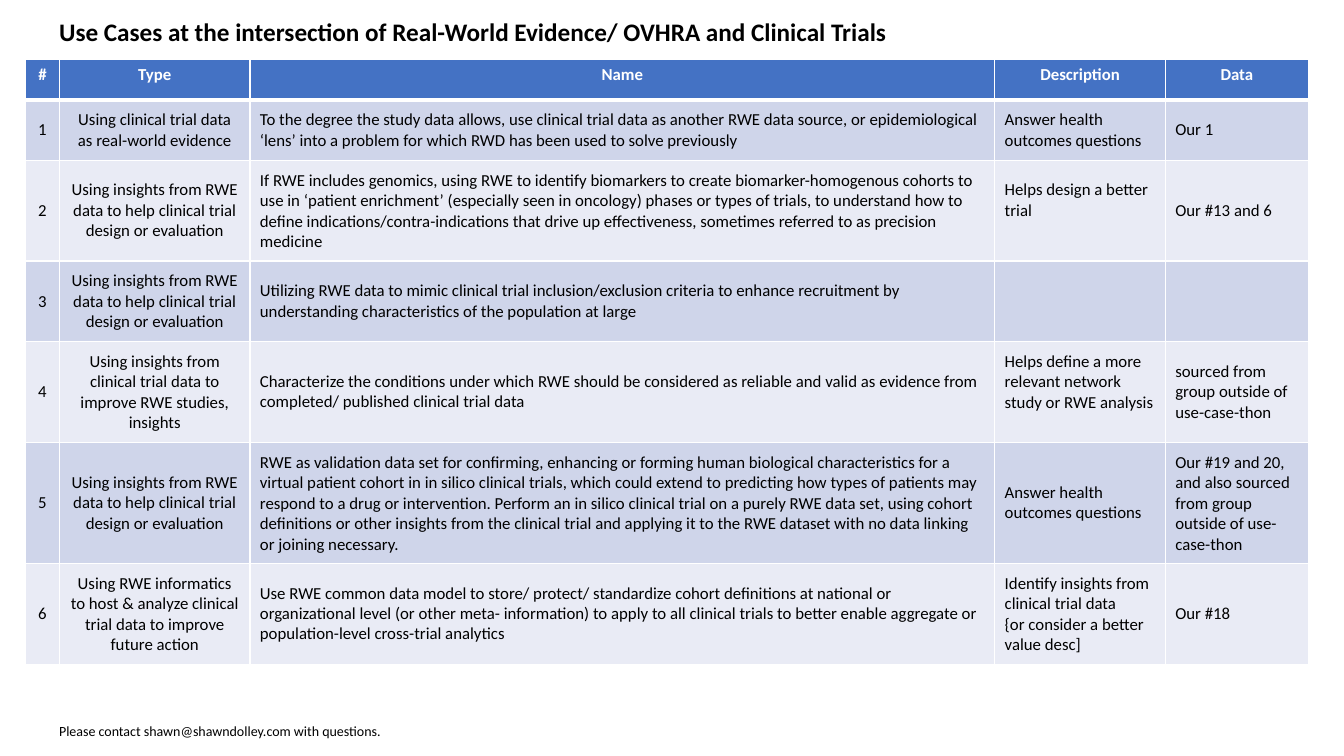
from lxml import etree
from pptx import Presentation
from pptx.dml.color import RGBColor
from pptx.enum import text
from pptx.oxml.ns import qn
from pptx.util import Cm, Pt

COLORS = {"header": "4472C4", "odd": "CFD5EA", "even": "E9EBF5",
          "white": "FFFFFF", "black": "000000"}
FONT = "Calibri"


def style_text(frame, size, color, bold=False, align=text.PP_ALIGN.LEFT):
    for paragraph in frame.paragraphs:
        paragraph.alignment = align
        paragraph.font.name = FONT
        paragraph.font.size = Pt(size)
        paragraph.font.bold = bold
        paragraph.font.color.rgb = RGBColor.from_string(COLORS[color])


def add_borders(cell, bottom_width):
    """Draw white lines around a cell; call before its fill is set."""
    properties = cell._tc.get_or_add_tcPr()
    for side, width in (("L", 1), ("R", 1), ("T", 1), ("B", bottom_width)):
        line = etree.SubElement(properties, qn(f"a:ln{side}"), w=str(Pt(width)))
        fill = etree.SubElement(line, qn("a:solidFill"))
        etree.SubElement(fill, qn("a:srgbClr"), val=COLORS["white"])


presentation = Presentation()
presentation.slide_width = Cm(33.87)
presentation.slide_height = Cm(19.05)
slide = presentation.slides.add_slide(presentation.slide_layouts[6])

# Title and contact line
captions = [
    ("Use Cases at the intersection of Real-World Evidence/ OVHRA and Clinical Trials",
     0.28, 1.02, 18, True),
    ("Please contact shawn@shawndolley.com with questions.", 18.08, 0.69, 10, False),
]
for wording, top, height, size, bold in captions:
    caption = slide.shapes.add_textbox(Cm(1.24), Cm(top), Cm(25.48), Cm(height))
    caption.text_frame.word_wrap = True
    caption.text_frame.text = wording
    style_text(caption.text_frame, size, "black", bold)

# Use cases
RWE_TO_TRIAL = "Using insights from RWE data to help clinical trial design or evaluation"
HEALTH_OUTCOMES = "Answer health outcomes questions"
use_cases = [
    ("#", "Type", "Name", "Description", "Data"),
    ("1", "Using clinical trial data as real-world evidence",
     "To the degree the study data allows, use clinical trial data as another RWE data "
     "source, or epidemiological ‘lens’ into a problem for which RWD has been used to "
     "solve previously",
     HEALTH_OUTCOMES, "Our 1"),
    ("2", RWE_TO_TRIAL,
     "If RWE includes genomics, using RWE to identify biomarkers to create "
     "biomarker-homogenous cohorts to use in ‘patient enrichment’ (especially seen in "
     "oncology) phases or types of trials, to understand how to define "
     "indications/contra-indications that drive up effectiveness, sometimes referred to "
     "as precision medicine",
     "Helps design a better trial", "Our #13 and 6"),
    ("3", RWE_TO_TRIAL,
     "Utilizing RWE data to mimic clinical trial inclusion/exclusion criteria to enhance "
     "recruitment by understanding characteristics of the population at large",
     "", ""),
    ("4", "Using insights from clinical trial data to improve RWE studies, insights",
     "Characterize the conditions under which RWE should be considered as reliable and "
     "valid as evidence from completed/ published clinical trial data",
     "Helps define a more relevant network study or RWE analysis",
     "sourced from group outside of use-case-thon"),
    ("5", RWE_TO_TRIAL,
     "RWE as validation data set for confirming, enhancing or forming human biological "
     "characteristics for a virtual patient cohort in in silico clinical trials, which "
     "could extend to predicting how types of patients may respond to a drug or "
     "intervention. Perform an in silico clinical trial on a purely RWE data set, using "
     "cohort definitions or other insights from the clinical trial and applying it to "
     "the RWE dataset with no data linking or joining necessary.",
     HEALTH_OUTCOMES,
     "Our #19 and 20, and also sourced from group outside of use-case-thon"),
    ("6", "Using RWE informatics to host & analyze clinical trial data to improve future action",
     "Use RWE common data model to store/ protect/ standardize cohort definitions at "
     "national or organizational level (or other meta- information) to apply to all "
     "clinical trials to better enable aggregate or population-level cross-trial analytics",
     "Identify insights from clinical trial data\n{or consider a better value desc]",
     "Our #18"),
]
column_widths = [0.86, 4.8, 18.77, 4.3, 3.6]
row_heights = [1.02, 1.51, 2.54, 2.03, 2.54, 3.05, 2.54]
raised_cells = {(2, 3), (4, 3)}

table = slide.shapes.add_table(
    len(use_cases), len(column_widths), Cm(0.64), Cm(1.5),
    Cm(sum(column_widths)), Cm(sum(row_heights))).table
for column, width in zip(table.columns, column_widths):
    column.width = Cm(width)
for row, height in zip(table.rows, row_heights):
    row.height = Cm(height)

for r, use_case in enumerate(use_cases):
    is_header = r == 0
    background = "header" if is_header else "odd" if r % 2 else "even"
    for c, wording in enumerate(use_case):
        cell = table.cell(r, c)
        add_borders(cell, 3 if is_header else 1)
        cell.fill.solid()
        cell.fill.fore_color.rgb = RGBColor.from_string(COLORS[background])
        cell.text = wording
        centered = is_header or c < 2
        style_text(cell.text_frame, 12, "white" if is_header else "black", is_header,
                   text.PP_ALIGN.CENTER if centered else text.PP_ALIGN.LEFT)
        if not is_header:
            cell.vertical_anchor = text.MSO_ANCHOR.MIDDLE
            cell.margin_left = cell.margin_right = cell.margin_top = Cm(0.25)
            cell.margin_bottom = Cm(0.76 if (r, c) in raised_cells else 0.25)

presentation.save("out.pptx")
